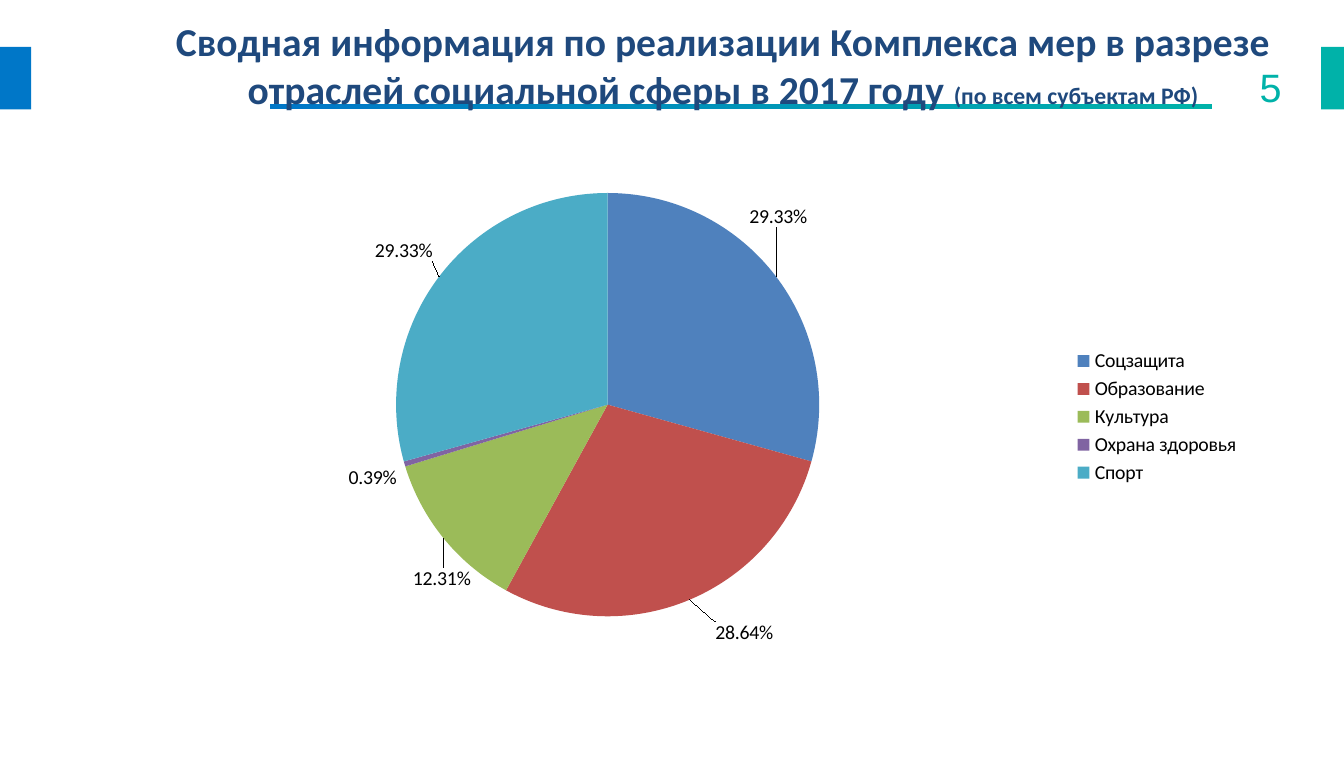
from pptx import Presentation
from pptx.chart.data import CategoryChartData
from pptx.dml.color import RGBColor
from pptx.enum.chart import XL_CHART_TYPE, XL_LABEL_POSITION, XL_LEGEND_POSITION
from pptx.enum.shapes import MSO_SHAPE
from pptx.enum.text import MSO_ANCHOR, MSO_AUTO_SIZE, PP_ALIGN
from pptx.oxml import parse_xml
from pptx.oxml.ns import nsdecls
from pptx.util import Inches, Pt

COLORS = {"blue": "0077C8", "teal": "00B2A9", "navy": "1F497D", "black": "000000"}
SECTORS = [
    ("Соцзащита", 0.2933, "4F81BD"),
    ("Образование", 0.2864, "C0504D"),
    ("Культура", 0.1231, "9BBB59"),
    ("Охрана здоровья", 0.0039, "8064A2"),
    ("Спорт", 0.2933, "4BACC6"),
]
# Label shifts as shares of the chart's width and height
SHIFTS = {0: (-0.03, -0.09), 1: (0.02, 0.03), 2: (0.03, 0.05), 4: (0, -0.02)}


def write(para, text, size, color, font="Calibri", bold=False):
    run = para.add_run()
    run.text = text
    run.font.name = font
    run.font.size = Pt(size)
    run.font.bold = bold
    run.font.color.rgb = RGBColor.from_string(COLORS[color])


def layout(inner="", **places):
    """Return a manual chart layout; inner holds the leading elements."""
    parts = "".join(f'<c:{key} val="{val}"/>' for key, val in places.items())
    return parse_xml(
        f'<c:layout {nsdecls("c")}><c:manualLayout>{inner}{parts}'
        "</c:manualLayout></c:layout>"
    )


deck = Presentation()
deck.slide_width, deck.slide_height = Inches(9.45), Inches(5.32)
slide = deck.slides.add_slide(deck.slide_layouts[5])
shapes = slide.shapes

# Side marks and the line under the heading
for left, top, width, height, color in [
    (0, 0.33, 0.22, 0.44, "blue"),
    (9.29, 0.33, 0.16, 0.44, "teal"),
    (1.9, 0.73, 6.62, 0.04, None),
]:
    bar = shapes.add_shape(
        MSO_SHAPE.RECTANGLE, Inches(left), Inches(top), Inches(width), Inches(height)
    )
    bar.shadow.inherit = False
    bar.line.fill.background()
    if color:
        bar.fill.solid()
        bar.fill.fore_color.rgb = RGBColor.from_string(COLORS[color])
    else:
        bar.fill.gradient()
        bar.fill.gradient_angle = 0
        for stop, name in zip(bar.fill.gradient_stops, ("blue", "teal")):
            stop.color.rgb = RGBColor.from_string(COLORS[name])

# Page number
page = shapes.add_textbox(Inches(8.67), Inches(0.39), Inches(0.44), Inches(0.28))
page.text_frame.word_wrap = True
para = page.text_frame.paragraphs[0]
para.alignment = PP_ALIGN.RIGHT
write(para, "5", 20, "teal", font="Arial")

# Pie chart
data = CategoryChartData(number_format="0.00%")
data.categories = [name for name, _, _ in SECTORS]
data.add_series("Series 1", [share for _, share, _ in SECTORS])
chart = shapes.add_chart(
    XL_CHART_TYPE.PIE, Inches(0.98), Inches(1.22), Inches(7.84), Inches(3.42), data
).chart
chart.has_title = False
chart.font.name = "Calibri"
chart.font.size = Pt(10)
chart.font.color.rgb = RGBColor.from_string(COLORS["black"])
chart.has_legend = True
chart.legend.position = XL_LEGEND_POSITION.RIGHT
chart.legend.include_in_layout = False

plot = chart.plots[0]
plot.vary_by_categories = True
series = plot.series[0]
labels = series.data_labels
labels.show_value = True
labels.show_percentage = False
labels.number_format = "0.00%"
labels.number_format_is_linked = False
labels.position = XL_LABEL_POSITION.OUTSIDE_END
for i, (_, _, color) in enumerate(SECTORS):
    point = series.points[i]
    point.format.fill.solid()
    point.format.fill.fore_color.rgb = RGBColor.from_string(color)
    if i in SHIFTS:
        point.data_label.position = XL_LABEL_POSITION.OUTSIDE_END

for label, (x, y) in zip(chart.element.xpath(".//c:dLbl"), SHIFTS.values()):
    label.insert(1, layout(x=x, y=y))
area = chart.element.xpath(".//c:plotArea")[0]
for old in area.xpath("./c:layout"):
    area.remove(old)
inner = '<c:layoutTarget val="inner"/><c:xMode val="edge"/><c:yMode val="edge"/>'
area.insert(0, layout(inner, x=0.23, y=0.04, w=0.38, h=0.87))

# Heading, in front of the line
title = shapes.title
title.left, title.top = Inches(0.98), Inches(0.07)
title.width, title.height = Inches(8.21), Inches(0.77)
frame = title.text_frame
frame.word_wrap = True
frame.auto_size = MSO_AUTO_SIZE.NONE
frame.vertical_anchor = MSO_ANCHOR.TOP
para = frame.paragraphs[0]
para.alignment = PP_ALIGN.CENTER
heading = (
    "Сводная информация по реализации Комплекса мер "
    "в разрезе отраслей социальной сферы в 2017 году "
)
write(para, heading, 20, "navy", bold=True)
write(para, "(по всем субъектам РФ)", 12, "navy", bold=True)
shapes.element.append(title.element)

deck.save("out.pptx")
